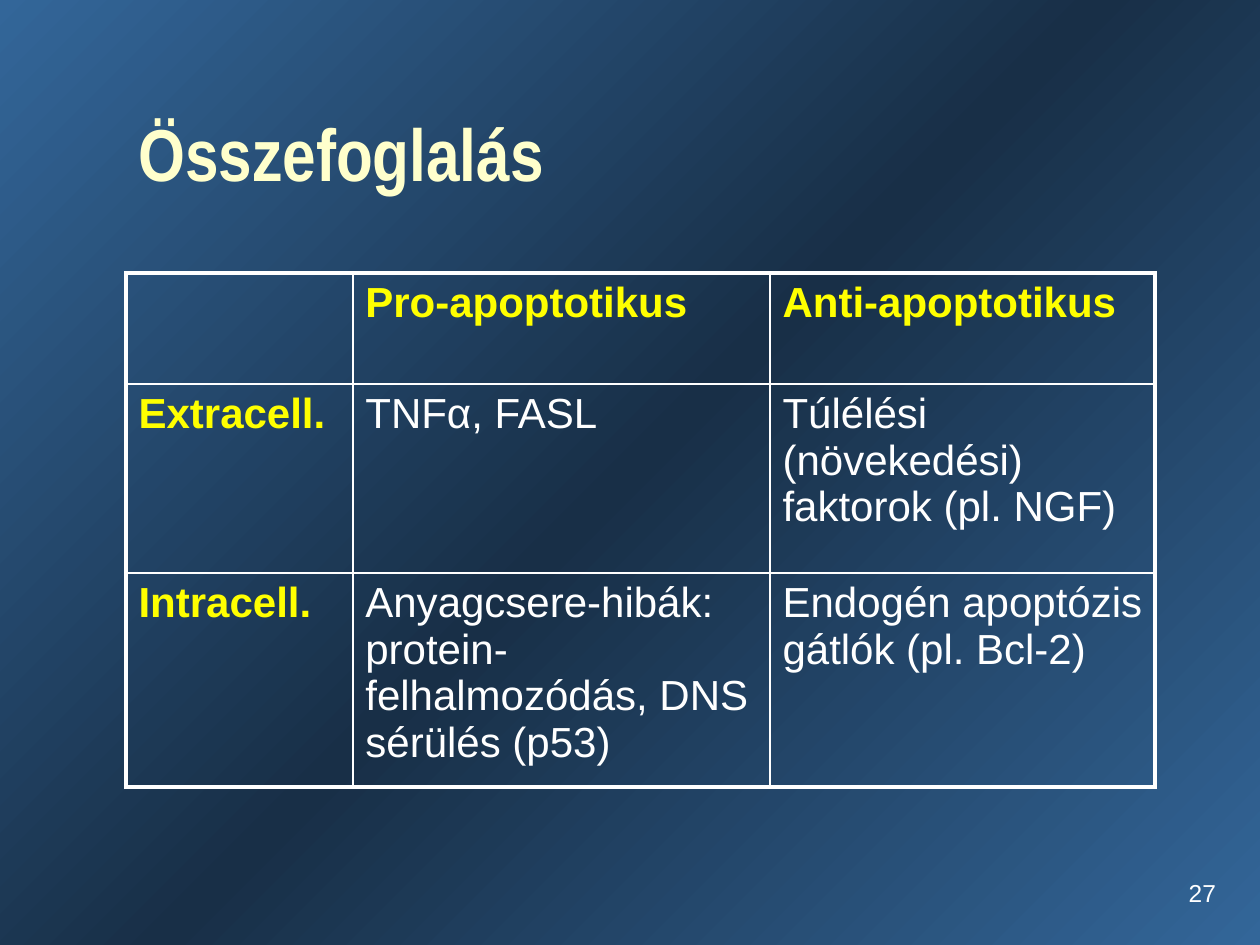
import copy

import pptx
import pptx.dml.color
import pptx.enum.text
import pptx.oxml
import pptx.oxml.ns
import pptx.util

Pt = pptx.util.Pt
RGBColor = pptx.dml.color.RGBColor
ALIGN = pptx.enum.text.PP_ALIGN
ANCHOR = pptx.enum.text.MSO_ANCHOR
qn = pptx.oxml.ns.qn

BLUE = RGBColor(0x33, 0x66, 0x99)
NAVY = RGBColor(0x18, 0x2F, 0x47)
CREAM = RGBColor(0xFF, 0xFF, 0xCC)
YELLOW = RGBColor(0xFF, 0xFF, 0x00)
WHITE = RGBColor(0xFF, 0xFF, 0xFF)

OUTER_LINE = Pt(2.25)
INNER_LINE = Pt(1)
COLUMN_WIDTHS = (129.6, 238.4, 220)
ROW_HEIGHTS = (63.4, 108, 114)
ROWS = (
    ("", "Pro-apoptotikus", "Anti-apoptotikus"),
    ("Extracell.", "TNFα, FASL", "Túlélési (növekedési) faktorok (pl. NGF)"),
    ("Intracell.", "Anyagcsere-hibák: protein-felhalmozódás, DNS sérülés (p53)",
     "Endogén apoptózis gátlók (pl. Bcl-2)"),
)


def set_font(paragraph, name, size, color, bold=False):
    font = paragraph.font
    font.name, font.size, font.bold = name, Pt(size), bold
    font.color.rgb = color


def paint_background(slide):
    fill = slide.background.fill
    fill.gradient()
    fill.gradient_angle = 315
    stop_list = slide.element.find(".//" + qn("a:gsLst"))
    stop_list.insert(1, copy.deepcopy(stop_list[0]))
    for stop, position, color in zip(fill.gradient_stops, (0, 0.5, 1), (BLUE, NAVY, BLUE)):
        stop.position = position
        stop.color.rgb = color


def add_text(slide, box, text, wrap=True):
    """Place a vertically centred text box and return its paragraph."""
    frame = slide.shapes.add_textbox(*map(Pt, box)).text_frame
    frame.word_wrap = wrap
    frame.vertical_anchor = ANCHOR.MIDDLE
    paragraph = frame.paragraphs[0]
    paragraph.text = text
    return paragraph


def add_title(slide, box):
    paragraph = add_text(slide, box, "Összefoglalás")
    paragraph.line_spacing = 0.7
    set_font(paragraph, "Arial Narrow", 42, CREAM, bold=True)


def add_slide_number(slide, box):
    paragraph = add_text(slide, box, "27", wrap=False)
    paragraph.alignment = ALIGN.RIGHT
    set_font(paragraph, "Arial", 14, WHITE)


def set_borders(cell, outer_sides):
    """Draw the four borders, heavier on the sides that face outwards."""
    properties = cell._tc.get_or_add_tcPr()
    for index, (side, outer) in enumerate(zip(("lnL", "lnR", "lnT", "lnB"), outer_sides)):
        width = OUTER_LINE if outer else INNER_LINE
        line = pptx.oxml.parse_xml(
            f'<a:{side} {pptx.oxml.ns.nsdecls("a")} w="{width}"><a:solidFill>'
            f'<a:srgbClr val="{WHITE}"/></a:solidFill></a:{side}>')
        properties.insert(index, line)


def add_summary_table(slide, left, top):
    last_row, last_column = len(ROWS) - 1, len(COLUMN_WIDTHS) - 1
    table = slide.shapes.add_table(
        len(ROWS), len(COLUMN_WIDTHS), Pt(left), Pt(top),
        Pt(sum(COLUMN_WIDTHS)), Pt(sum(ROW_HEIGHTS))).table
    table.first_row = table.horz_banding = False
    for column, width in zip(table.columns, COLUMN_WIDTHS):
        column.width = Pt(width)
    for row, height in zip(table.rows, ROW_HEIGHTS):
        row.height = Pt(height)
    for row_index, texts in enumerate(ROWS):
        for column_index, text in enumerate(texts):
            cell = table.cell(row_index, column_index)
            cell.fill.background()
            set_borders(cell, (column_index == 0, column_index == last_column,
                               row_index == 0, row_index == last_row))
            is_heading = row_index == 0 or column_index == 0
            paragraph = cell.text_frame.paragraphs[0]
            paragraph.text = text
            set_font(paragraph, "Arial", 24, YELLOW if is_heading else WHITE, is_heading)


def main():
    presentation = pptx.Presentation()
    presentation.slide_width, presentation.slide_height = Pt(720), Pt(540)
    slide = presentation.slides.add_slide(presentation.slide_layouts[6])
    paint_background(slide)
    add_slide_number(slide, (552, 492, 150, 36))
    add_title(slide, (72, 48, 588, 90))
    add_summary_table(slide, 72, 156)
    presentation.save("out.pptx")


if __name__ == "__main__":
    main()
